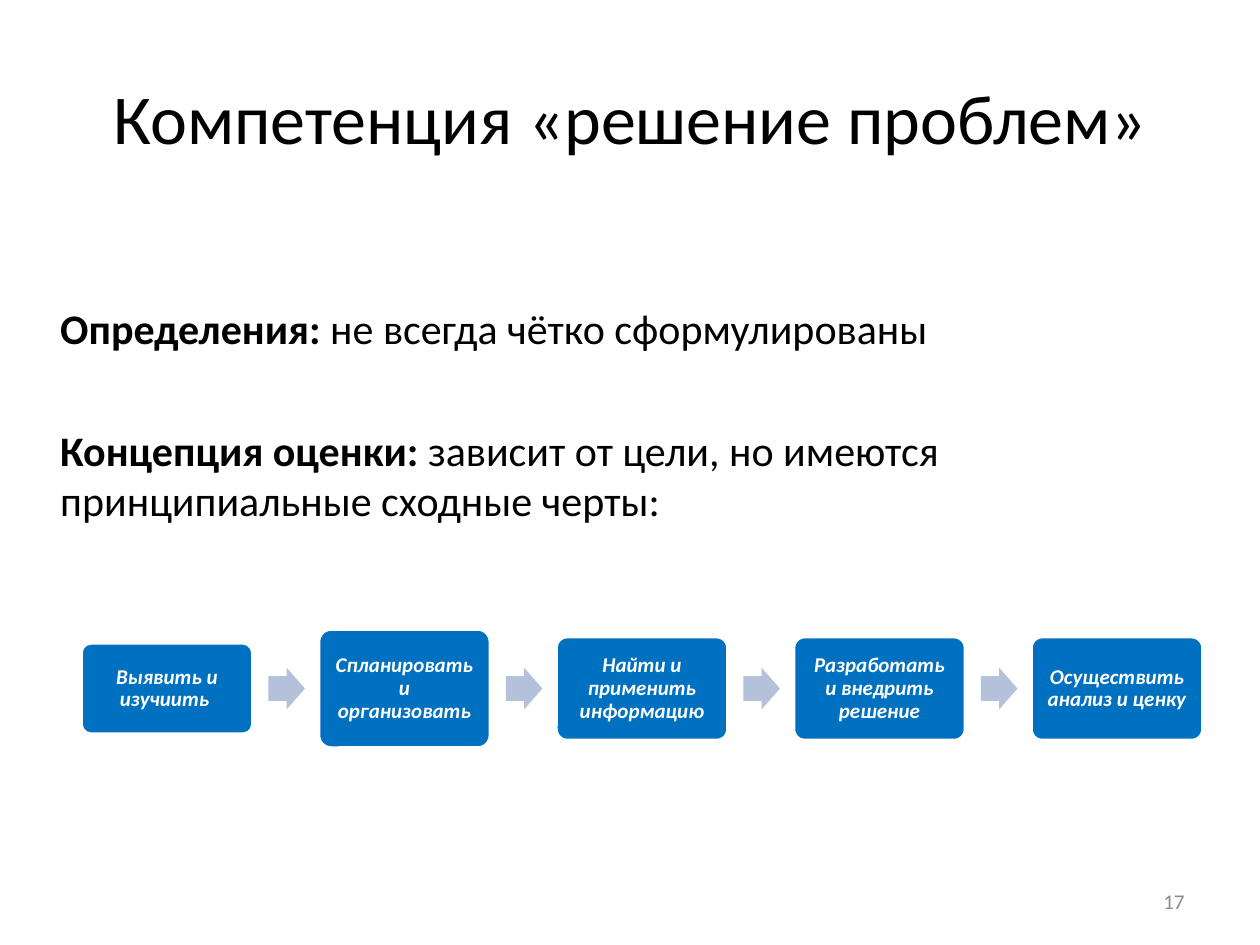
from pptx import Presentation
from pptx.dml.color import RGBColor
from pptx.enum.shapes import MSO_SHAPE
from pptx.enum.text import MSO_ANCHOR, PP_ALIGN
from pptx.util import Inches, Pt

BLACK = RGBColor(0x00, 0x00, 0x00)
WHITE = RGBColor(0xFF, 0xFF, 0xFF)
GRAY = RGBColor(0x8C, 0x8C, 0x8C)
BLUE = RGBColor(0x00, 0x70, 0xC0)
ARROW_BLUE = RGBColor(0xB3, 0xC1, 0xDB)

# Process steps: text and box height, centred on one line
STEPS = [
    ("Выявить и изучиить ", 0.71),
    ("Спланировать и организовать", 0.93),
    ("Найти и применить информацию", 0.81),
    ("Разработать и внедрить решение", 0.81),
    ("Осуществить анализ и ценку", 0.81),
]
STEP_LEFT, STEP_WIDTH, STEP_PITCH, STEP_MIDDLE = 0.65, 1.35, 1.885, 5.465
ARROW_OFFSET, ARROW_WIDTH, ARROW_HEIGHT = 1.48, 0.29, 0.33

STATEMENTS = [
    ("Определения: ", "не всегда чётко сформулированы"),
    ("Концепция оценки: ",
     "зависит от цели, но имеются принципиальные сходные черты:"),
]


def add_run(p, text, size, color, **formats):
    r = p.add_run()
    r.text = text
    for name, value in {"name": "Calibri", "size": Pt(size), **formats}.items():
        setattr(r.font, name, value)
    r.font.color.rgb = color


def add_text_box(s, left, top, width, height, anchor=MSO_ANCHOR.MIDDLE):
    sp = s.shapes.add_textbox(Inches(left), Inches(top),
                              Inches(width), Inches(height))
    tf = sp.text_frame
    tf.word_wrap = True
    tf.vertical_anchor = anchor
    return tf


def add_label(s, box, text, size, color, align):
    p = add_text_box(s, *box).paragraphs[0]
    p.alignment = align
    add_run(p, text, size, color)


def add_statements(s):
    tf = add_text_box(s, 0.38, 2.35, 9.27, 2.3, MSO_ANCHOR.TOP)
    for i, (term, text) in enumerate(STATEMENTS):
        p = tf.add_paragraph() if i else tf.paragraphs[0]
        p.space_before = Pt(41 if i else 0)
        add_run(p, term, 24, BLACK, bold=True)
        add_run(p, text, 24, BLACK)


def add_filled_shape(s, kind, left, width, height, fill, adjustments):
    sp = s.shapes.add_shape(kind, Inches(left), Inches(STEP_MIDDLE - height / 2),
                            Inches(width), Inches(height))
    sp.shadow.inherit = False
    sp.fill.solid()
    sp.fill.fore_color.rgb = fill
    sp.line.fill.background()
    for i, value in enumerate(adjustments):
        sp.adjustments[i] = value
    return sp


def add_step(s, left, text, height):
    sp = add_filled_shape(s, MSO_SHAPE.ROUNDED_RECTANGLE, left, STEP_WIDTH,
                          height, BLUE, [0.1])
    sp.line.color.rgb = WHITE
    sp.line.width = Pt(1)
    tf = sp.text_frame
    tf.word_wrap = True
    tf.vertical_anchor = MSO_ANCHOR.MIDDLE
    for side in ("left", "right", "top", "bottom"):
        setattr(tf, f"margin_{side}", Inches(0.07))
    p = tf.paragraphs[0]
    p.alignment = PP_ALIGN.CENTER
    p.line_spacing = 0.9
    add_run(p, text, 12, WHITE, bold=True, italic=True)


def add_process(s):
    for i, (text, height) in enumerate(STEPS):
        left = STEP_LEFT + i * STEP_PITCH
        add_step(s, left, text, height)
        if i < len(STEPS) - 1:
            add_filled_shape(s, MSO_SHAPE.RIGHT_ARROW, left + ARROW_OFFSET,
                             ARROW_WIDTH, ARROW_HEIGHT, ARROW_BLUE, [0.6, 0.5])


def main():
    prs = Presentation()
    prs.slide_width, prs.slide_height = Inches(10), Inches(7.5)
    s = prs.slides.add_slide(prs.slide_layouts[6])

    # Title and slide number
    add_label(s, (0.5, 0.3, 9, 1.25), "Компетенция «решение проблем»",
              40, BLACK, PP_ALIGN.CENTER)
    add_label(s, (7.17, 6.95, 2.33, 0.4), "17", 12, GRAY, PP_ALIGN.RIGHT)

    # Statements and process
    add_statements(s)
    add_process(s)

    prs.save("out.pptx")


if __name__ == "__main__":
    main()
